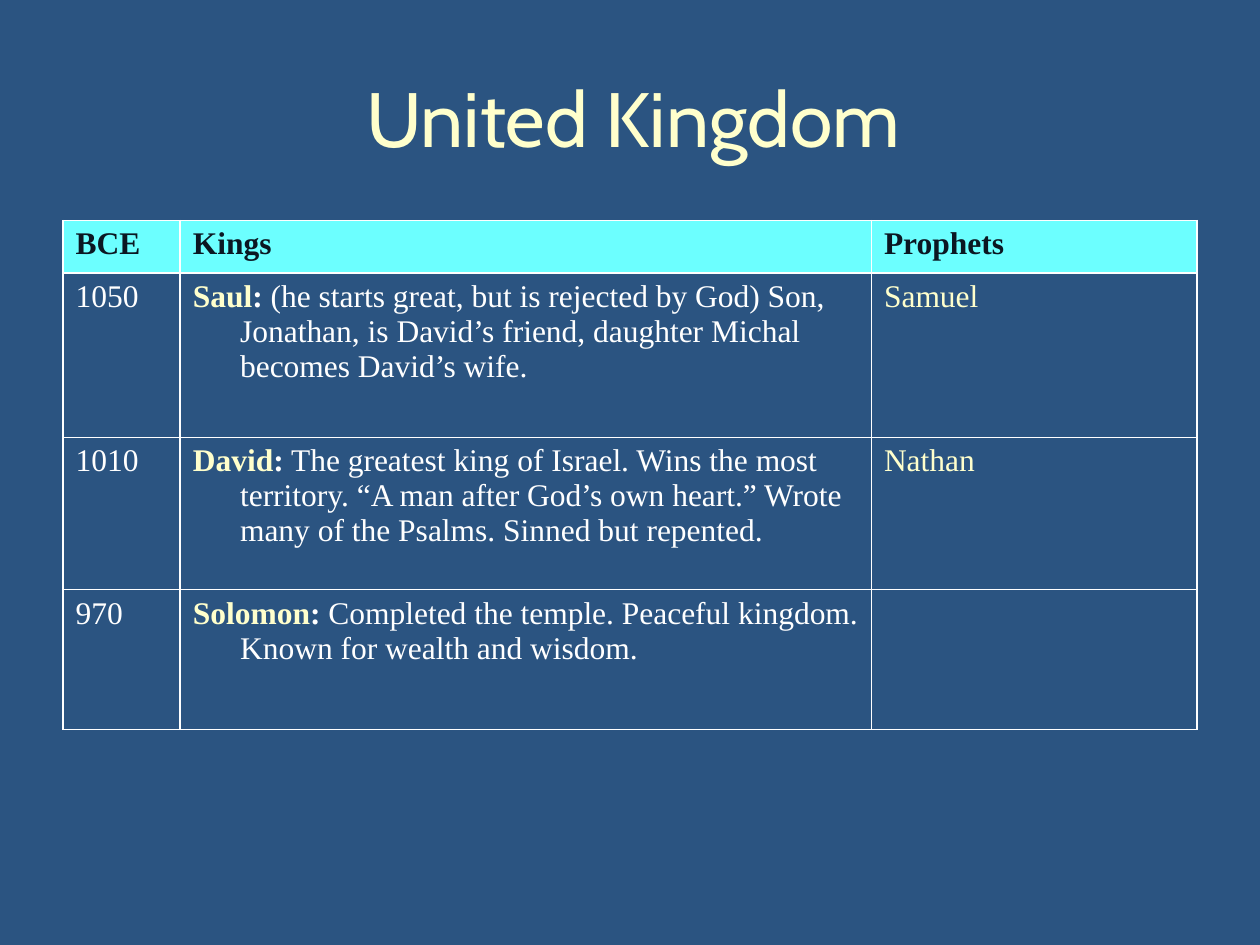
import pptx
import pptx.dml.color
import pptx.enum.text
import pptx.oxml
import pptx.oxml.ns
import pptx.util
from dataclasses import dataclass

Pt = pptx.util.Pt


@dataclass(frozen=True)
class Theme:
    back: str = "2B5481"
    cream: str = "FFFFCC"
    white: str = "FFFFFF"
    dark: str = "0B1722"
    cyan: str = "6CFFFF"
    head: str = "Cabin"
    body: str = "Times New Roman"
    big: int = 44
    small: int = 18
    line: int = 1
    hang: int = 27


def rgb(code):
    return pptx.dml.color.RGBColor.from_string(code)


class Deck:
    def __init__(self, theme):
        self.theme = theme
        self.file = pptx.Presentation()
        self.file.slide_width, self.file.slide_height = Pt(720), Pt(540)
        self.slide = self.file.slides.add_slide(self.file.slide_layouts[6])
        fill = self.slide.background.fill
        fill.solid()
        fill.fore_color.rgb = rgb(theme.back)

    def style(self, font, face, size, color, bold=False):
        font.name, font.size, font.bold = face, Pt(size), bold
        font.color.rgb = rgb(color)

    def indent(self, para, left, first=0):
        props = para._p.get_or_add_pPr()
        props.set("marL", str(Pt(left)))
        props.set("indent", str(Pt(first)))

    def title(self, text, left, top, width, height):
        frame = self.slide.shapes.add_textbox(
            Pt(left), Pt(top), Pt(width), Pt(height)).text_frame
        frame.word_wrap = True
        frame.vertical_anchor = pptx.enum.text.MSO_ANCHOR.MIDDLE
        frame.text = text
        para = frame.paragraphs[0]
        para.alignment = pptx.enum.text.PP_ALIGN.CENTER
        self.indent(para, 4)
        self.style(para.runs[0].font, self.theme.head, self.theme.big,
                   self.theme.cream)

    def border(self, cell):
        props = cell._tc.get_or_add_tcPr()
        space = pptx.oxml.ns.nsdecls("a")
        for spot, side in enumerate(("lnL", "lnR", "lnT", "lnB")):
            props.insert(spot, pptx.oxml.parse_xml(
                f'<a:{side} {space} w="{Pt(self.theme.line)}"><a:solidFill>'
                f'<a:srgbClr val="{self.theme.white}"/></a:solidFill></a:{side}>'))

    def cell(self, cell, parts, fill=None):
        if fill:
            cell.fill.solid()
            cell.fill.fore_color.rgb = rgb(fill)
        else:
            cell.fill.background()
        self.border(cell)
        para = cell.text_frame.paragraphs[0]
        self.indent(para, self.theme.hang, -self.theme.hang)
        para.font.size = Pt(self.theme.small)
        for text, color, bold in parts:
            run = para.add_run()
            run.text = text
            self.style(run.font, self.theme.body, self.theme.small, color, bold)

    def table(self, left, top, cols, rows, data):
        grid = self.slide.shapes.add_table(
            len(rows), len(cols), Pt(left), Pt(top),
            Pt(sum(cols)), Pt(sum(rows))).table
        for col, width in zip(grid.columns, cols):
            col.width = Pt(width)
        for row, height, line in zip(grid.rows, rows, data):
            row.height = Pt(height)
            fill = self.theme.cyan if line is data[0] else None
            for cell, parts in zip(row.cells, line):
                self.cell(cell, parts, fill)


def main():
    theme = Theme()
    deck = Deck(theme)

    # Title
    deck.title("United Kingdom", 36, 21.6, 648, 90)

    # Kings and prophets
    heads = ("BCE", "Kings", "Prophets")
    reigns = [
        ("1050", "Saul", " (he starts great, but is rejected by God) Son, "
         "Jonathan, is David’s friend, daughter Michal becomes David’s wife.",
         "Samuel"),
        ("1010", "David", " The greatest king of Israel. Wins the most "
         "territory. “A man after God’s own heart.” Wrote many of the Psalms. "
         "Sinned but repented.", "Nathan"),
        ("970", "Solomon", " Completed the temple. Peaceful kingdom. "
         "Known for wealth and wisdom.", ""),
    ]
    data = [[[(head, theme.dark, True)] for head in heads]]
    for year, king, story, seer in reigns:
        data.append([
            [(year, theme.white, False)],
            [(king, theme.cream, True), (":", theme.white, True),
             (story, theme.white, False)],
            [(seer, theme.cream, False)] if seer else [],
        ])
    deck.table(36, 126, (67, 395, 186), (30, 94, 87, 80), data)

    deck.file.save("out.pptx")


if __name__ == "__main__":
    main()
